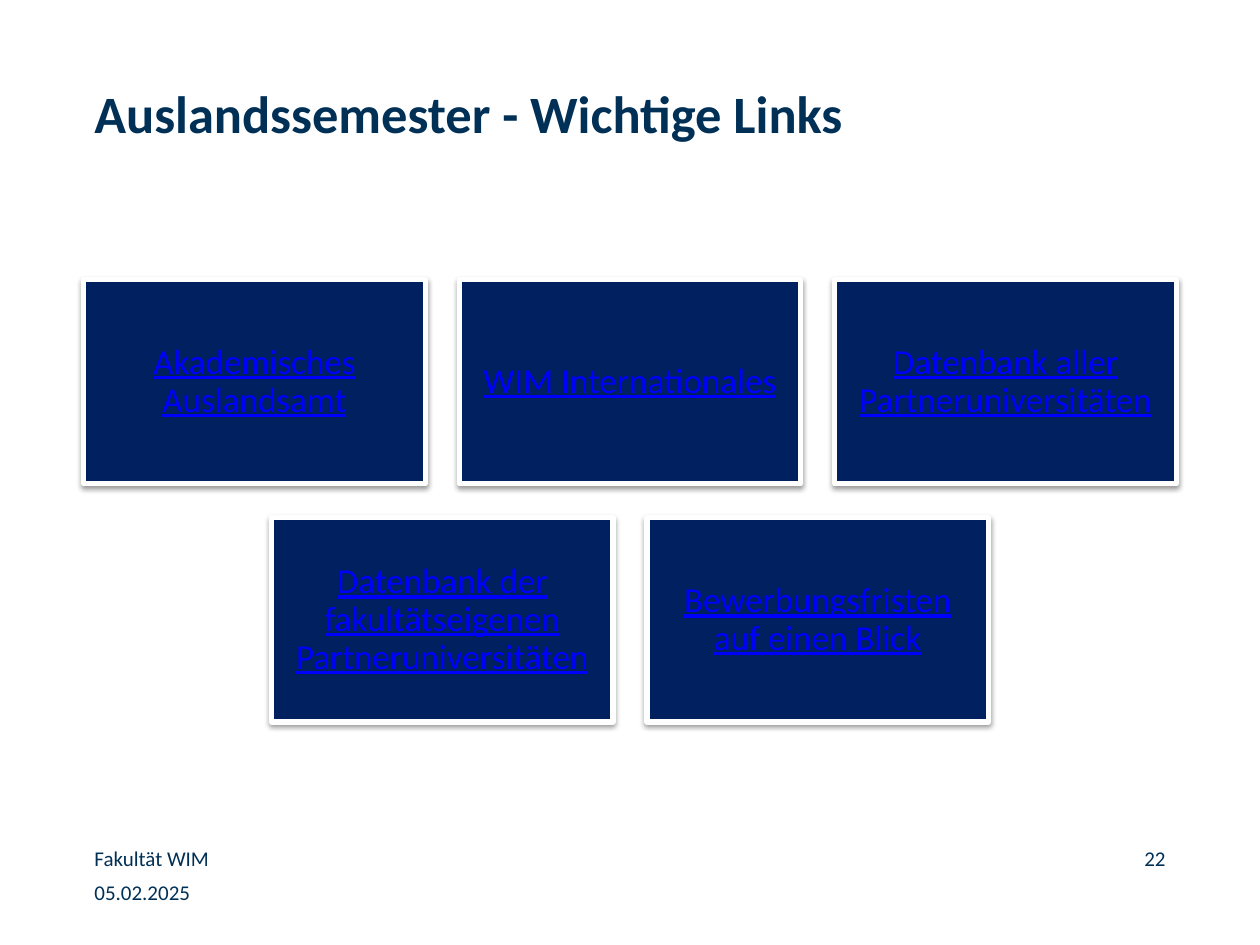
from dataclasses import dataclass

from lxml.etree import SubElement
from pptx import Presentation
from pptx.dml.color import RGBColor
from pptx.enum.shapes import MSO_SHAPE
from pptx.enum.text import MSO_ANCHOR, PP_ALIGN
from pptx.oxml.ns import qn
from pptx.util import Inches, Pt


@dataclass(frozen=True)
class Theme:
    font: str = "Calibri"
    text: RGBColor = RGBColor(0x00, 0x30, 0x56)
    link: RGBColor = RGBColor(0x00, 0x00, 0xFF)
    tile: RGBColor = RGBColor(0x00, 0x20, 0x60)
    border: RGBColor = RGBColor(0xFF, 0xFF, 0xFF)
    shadow: str = "000000"
    title_size: Pt = Pt(30)
    tile_size: Pt = Pt(20)
    footer_size: Pt = Pt(12)


THEME = Theme()
SLIDE_WIDTH, SLIDE_HEIGHT = 10, 7.5
TILE_WIDTH, TILE_HEIGHT, TILE_GAP = 2.71, 1.62, 0.27
TILES_TOP = 2.22
LINK_ROWS = [
    ["Akademisches Auslandsamt", "WIM Internationales",
     "Datenbank aller Partneruniversitäten"],
    ["Datenbank der fakultätseigenen Partneruniversitäten",
     "Bewerbungsfristen auf einen Blick"],
]


def write_text(shape, text, size, color, align, margin=0):
    """Fill a shape with one formatted paragraph and return that paragraph."""
    text_frame = shape.text_frame
    text_frame.word_wrap = True
    text_frame.margin_left = text_frame.margin_right = Inches(margin)
    text_frame.margin_top = text_frame.margin_bottom = Inches(margin)
    text_frame.text = text
    paragraph = text_frame.paragraphs[0]
    paragraph.alignment = align
    font = paragraph.runs[0].font
    font.name = THEME.font
    font.size = size
    font.color.rgb = color
    return paragraph


def add_label(slide, text, left, top, width, height, size=THEME.footer_size,
              bold=False, align=PP_ALIGN.LEFT):
    box = slide.shapes.add_textbox(
        Inches(left), Inches(top), Inches(width), Inches(height))
    paragraph = write_text(box, text, size, THEME.text, align)
    paragraph.runs[0].font.bold = bold


def add_soft_shadow(shape):
    """Give the shape a blurred shadow that falls straight down."""
    shape.shadow.inherit = False
    effects = shape.element.spPr.find(qn("a:effectLst"))
    shadow = SubElement(effects, qn("a:outerShdw"), blurRad=str(Pt(3.1)),
                        dist=str(Pt(1.6)), dir="5400000", rotWithShape="0")
    color = SubElement(shadow, qn("a:srgbClr"), val=THEME.shadow)
    SubElement(color, qn("a:alpha"), val="38000")


def add_link_tile(slide, text, left, top):
    tile = slide.shapes.add_shape(
        MSO_SHAPE.RECTANGLE, Inches(left), Inches(top),
        Inches(TILE_WIDTH), Inches(TILE_HEIGHT))
    tile.fill.solid()
    tile.fill.fore_color.rgb = THEME.tile
    tile.line.color.rgb = THEME.border
    tile.line.width = Pt(3)
    add_soft_shadow(tile)
    tile.text_frame.vertical_anchor = MSO_ANCHOR.MIDDLE
    paragraph = write_text(tile, text, THEME.tile_size, THEME.link,
                           PP_ALIGN.CENTER, margin=0.08)
    paragraph.line_spacing = 0.9
    paragraph.runs[0].font.underline = True


def add_link_grid(slide):
    """Place the tiles in rows, each row centred on the slide."""
    for row, links in enumerate(LINK_ROWS):
        row_width = len(links) * (TILE_WIDTH + TILE_GAP) - TILE_GAP
        left = (SLIDE_WIDTH - row_width) / 2
        top = TILES_TOP + row * (TILE_HEIGHT + TILE_GAP)
        for column, link in enumerate(links):
            add_link_tile(slide, link,
                          left + column * (TILE_WIDTH + TILE_GAP), top)


def main():
    presentation = Presentation()
    presentation.slide_width = Inches(SLIDE_WIDTH)
    presentation.slide_height = Inches(SLIDE_HEIGHT)
    slide = presentation.slides.add_slide(presentation.slide_layouts[6])

    add_label(slide, "Auslandssemester - Wichtige Links", 0.75, 0.64, 6, 1.25,
              size=THEME.title_size, bold=True)
    add_label(slide, "05.02.2025", 0.75, 6.98, 2.33, 0.2)
    add_label(slide, "Fakultät WIM", 0.75, 6.71, 3.17, 0.2)
    add_label(slide, "22", 8.1, 6.71, 1.15, 0.2, align=PP_ALIGN.RIGHT)
    add_link_grid(slide)

    presentation.save("out.pptx")


if __name__ == "__main__":
    main()
